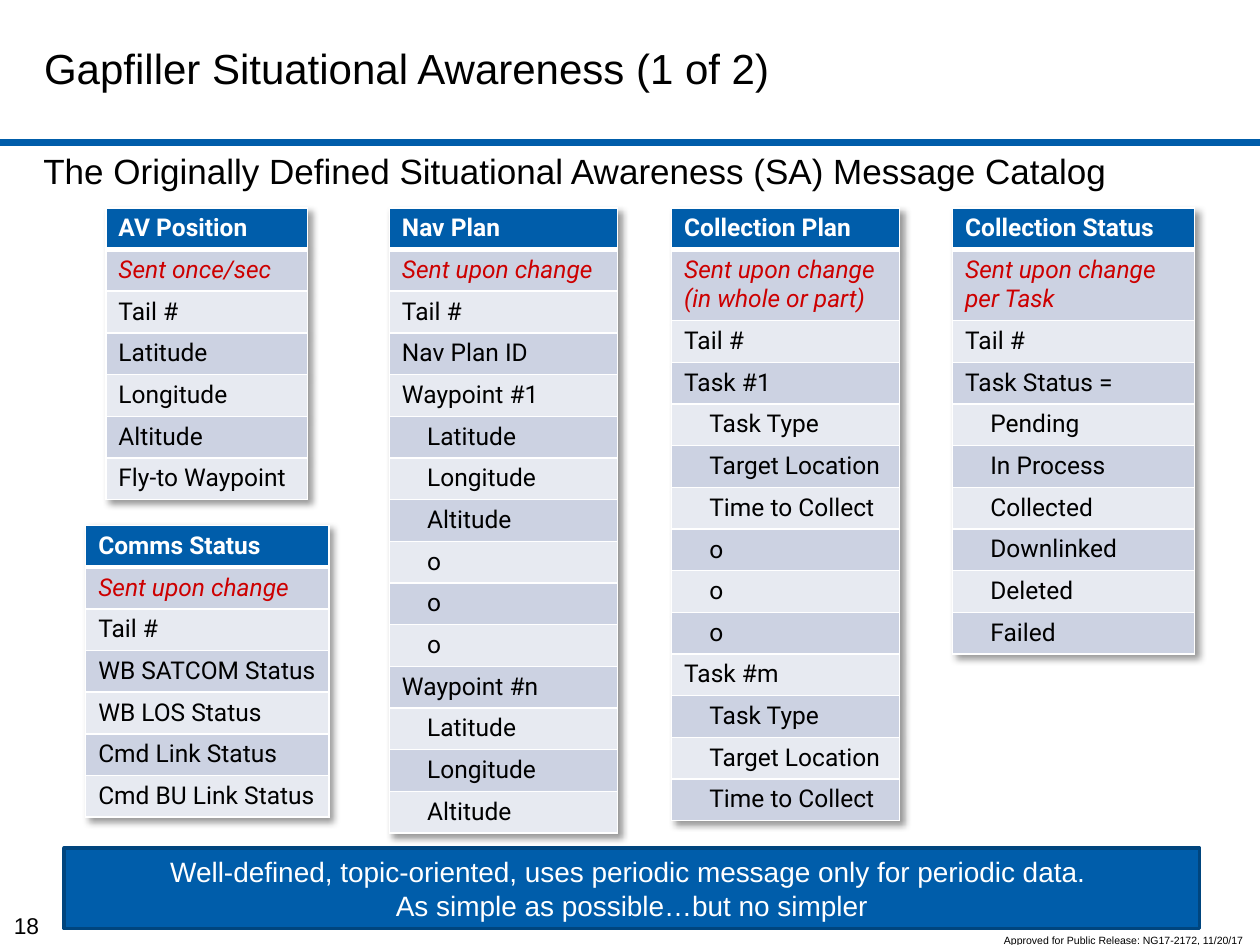
"""Build the Gapfiller situational awareness message catalog slide."""
from lxml.etree import SubElement
from pptx import Presentation
from pptx.dml.color import RGBColor
from pptx.enum.shapes import MSO_CONNECTOR, MSO_SHAPE
from pptx.enum.text import MSO_ANCHOR, PP_ALIGN
from pptx.oxml import parse_xml
from pptx.oxml.ns import nsdecls, qn
from pptx.util import Inches, Pt

BLUE = RGBColor(0x00, 0x5D, 0xAA)
DARK_BLUE = RGBColor(0x00, 0x45, 0x7E)
RED = RGBColor(0xCC, 0x00, 0x00)
BLACK = RGBColor(0x00, 0x00, 0x00)
WHITE = RGBColor(0xFF, 0xFF, 0xFF)
BANDS = (RGBColor(0xE7, 0xEA, 0xF1), RGBColor(0xCC, 0xD2, 0xE2))

TITLE = "Gapfiller Situational Awareness (1 of 2)"
SUBTITLE = "The Originally Defined Situational Awareness (SA) Message Catalog"
BANNER = ("Well-defined, topic-oriented, uses periodic message only for periodic data. ",
          "As simple as possible…but no simpler")
PAGE_NUMBER = "18"
RELEASE = "Approved for Public Release: NG17-2172, 11/20/17"

INDENT = ">"
BULLET_ONLY = " "
POSITION = [">Latitude", ">Longitude", ">Altitude"]
TASK = [">Task Type", ">Target Location", ">Time to Collect"]
ELLIPSIS = [BULLET_ONLY] * 3
MESSAGES = [
    (0.84, 1.65, 1.6, 1, ["AV Position", "Sent once/sec", "Tail #", "Latitude", "Longitude",
                          "Altitude", "Fly-to Waypoint"]),
    (3.09, 1.65, 1.81, 1, ["Nav Plan", "Sent upon change", "Tail #", "Nav Plan ID", "Waypoint #1",
                           *POSITION, *ELLIPSIS, "Waypoint #n", *POSITION]),
    (5.33, 1.65, 1.81, 2, ["Collection Plan", "Sent upon change (in whole or part)", "Tail #",
                           "Task #1", *TASK, *ELLIPSIS, "Task #m", *TASK]),
    (7.56, 1.65, 1.92, 2, ["Collection Status", "Sent upon change per Task", "Tail #",
                           "Task Status =", ">Pending", ">In Process", ">Collected",
                           ">Downlinked", ">Deleted", ">Failed"]),
    (0.68, 4.17, 1.93, 1, ["Comms Status", "Sent upon change", "Tail #", "WB SATCOM Status",
                           "WB LOS Status", "Cmd Link Status", "Cmd BU Link Status"]),
]
ROW_HEIGHT = 0.33
EXTRA_LINE = 0.22
STEP = 0.2
SHADOW = (f'<a:effectLst {nsdecls("a")}><a:outerShdw blurRad="50800" dist="38100" dir="2700000" '
          'algn="tl" rotWithShape="0"><a:srgbClr val="000000"><a:alpha val="40000"/>'
          '</a:srgbClr></a:outerShdw></a:effectLst>')


def box(left, top, width, height):
    return [Inches(value) for value in (left, top, width, height)]


def write_text(frame, *lines, size, font="Arial", color=BLACK, bold=False, italic=False,
               align=PP_ALIGN.LEFT, indent=0, bullet=None):
    for index, line in enumerate(lines):
        paragraph = frame.add_paragraph() if index else frame.paragraphs[0]
        paragraph.alignment = align
        if indent:
            paragraph.level = 1
            properties = paragraph._p.get_or_add_pPr()
            properties.set("marL", str(Inches(indent + STEP if bullet else indent)))
            properties.set("indent", str(Inches(-STEP if bullet else 0)))
            if bullet:
                SubElement(properties, qn("a:buFont"), typeface=font)
                SubElement(properties, qn("a:buChar"), char=bullet)
        run = paragraph.add_run()
        run.text = line
        run.font.name, run.font.size = font, Pt(size)
        run.font.bold, run.font.italic = bold, italic
        run.font.color.rgb = color


def add_label(slide, place, text, wrap=False, **style):
    frame = slide.shapes.add_textbox(*box(*place)).text_frame
    frame.word_wrap = wrap
    write_text(frame, text, **style)


def set_borders(cell, top, bottom):
    properties = cell._tc.get_or_add_tcPr()
    for side, width in (("L", 1), ("R", 1), ("T", top), ("B", bottom)):
        line = SubElement(properties, qn(f"a:ln{side}"), w=str(Pt(width)))
        fill = SubElement(line, qn("a:solidFill"))
        SubElement(fill, qn("a:srgbClr"), val=str(WHITE))


def add_message(slide, left, top, width, note_lines, fields):
    heights = [ROW_HEIGHT] * len(fields)
    heights[1] += EXTRA_LINE * (note_lines - 1)
    table = slide.shapes.add_table(len(fields), 1, *box(left, top, width, sum(heights))).table
    table._tbl.tblPr.insert(0, parse_xml(SHADOW))
    for index, (field, height) in enumerate(zip(fields, heights)):
        table.rows[index].height = Inches(height)
        cell = table.cell(index, 0)
        cell.margin_top = cell.margin_bottom = Pt(3.5)
        set_borders(cell, 3 if index == 1 else 1, 3 if index == 0 else 1)
        cell.fill.solid()
        cell.fill.fore_color.rgb = BANDS[index % 2] if index else BLUE
        write_text(cell.text_frame, field.removeprefix(INDENT), size=14, font="Roboto",
                   color={0: WHITE, 1: RED}.get(index, BLACK), bold=index == 0,
                   italic=index == 1, indent=STEP if field[0] in (INDENT, BULLET_ONLY) else 0,
                   bullet="o" if field == BULLET_ONLY else None)


def add_rule(slide):
    rule = slide.shapes.add_connector(MSO_CONNECTOR.STRAIGHT, *box(0, 1.13, 10, 1.13))
    rule.line.color.rgb = BLUE
    rule.line.width = Pt(3.75)
    SubElement(rule._element.spPr, qn("a:effectLst"))


def add_banner(slide):
    banner = slide.shapes.add_shape(MSO_SHAPE.RECTANGLE, *box(0.51, 6.73, 9.01, 0.64))
    banner.shadow.inherit = False
    banner.fill.solid()
    banner.fill.fore_color.rgb = BLUE
    banner.line.color.rgb = DARK_BLUE
    banner.line.width = Pt(2)
    banner.text_frame.vertical_anchor = MSO_ANCHOR.MIDDLE
    write_text(banner.text_frame, *BANNER, size=16, color=WHITE, align=PP_ALIGN.CENTER)


def main():
    presentation = Presentation()
    presentation.slide_width, presentation.slide_height = Inches(10), Inches(7.5)
    slide = presentation.slides.add_slide(presentation.slide_layouts[5])
    title = slide.shapes.title
    title.left, title.top, title.width, title.height = box(0.25, 0.08, 7.33, 0.92)
    title.text_frame.vertical_anchor = MSO_ANCHOR.MIDDLE
    write_text(title.text_frame, TITLE, size=24)
    add_rule(slide)
    add_label(slide, (-0.08, 1.14, 9.29, 0.46), SUBTITLE, wrap=True, size=20,
              align=PP_ALIGN.CENTER)
    add_label(slide, (0, 7.19, 0.42, 0.33), PAGE_NUMBER, size=13, align=PP_ALIGN.CENTER)
    for message in MESSAGES:
        add_message(slide, *message)
    add_banner(slide)
    add_label(slide, (7.87, 7.36, 2.13, 0.2), RELEASE, size=6)
    presentation.save("out.pptx")


if __name__ == "__main__":
    main()
